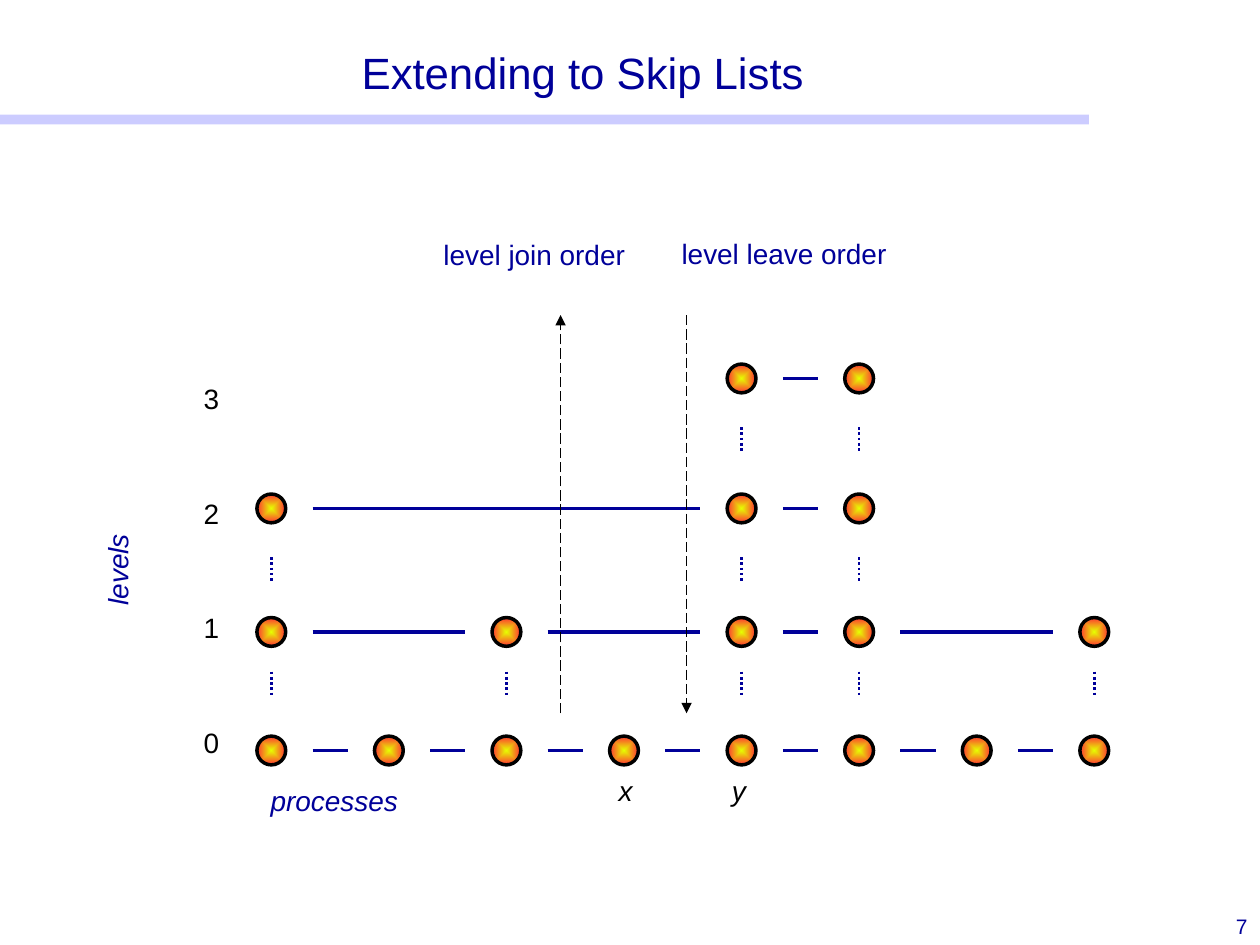
from pptx import Presentation
from pptx.dml.color import RGBColor
from pptx.enum.dml import MSO_LINE
from pptx.enum.shapes import MSO_CONNECTOR, MSO_SHAPE
from pptx.enum.text import MSO_ANCHOR, PP_ALIGN
from pptx.oxml import parse_xml
from pptx.oxml.ns import nsdecls, qn
from pptx.util import Cm, Pt

NAVY = RGBColor(0x00, 0x00, 0x99)
BLACK = RGBColor(0x00, 0x00, 0x00)
LAVENDER = RGBColor(0xCC, 0xCC, 0xFF)
YELLOW = RGBColor(0xE6, 0xFF, 0x00)
RED = RGBColor(0xFF, 0x33, 0x33)

prs = Presentation()
prs.slide_width, prs.slide_height = Cm(25.4), Cm(19.05)
s = prs.slides.add_slide(prs.slide_layouts[6])


def add_text(text, x, y, w, h, size=16, color=NAVY, align=PP_ALIGN.CENTER,
             italic=False, wrap=True, spacing=None):
    box = s.shapes.add_textbox(Cm(x), Cm(y), Cm(w), Cm(h))
    tf = box.text_frame
    tf.word_wrap = wrap
    p = tf.paragraphs[0]
    p.text = text
    p.alignment = align
    p.line_spacing = spacing
    p.font.name, p.font.size, p.font.italic = "Arial", Pt(size), italic
    p.font.color.rgb = color
    return tf


def add_line(x1, y1, x2, y2, width=1.75, color=NAVY, dash=None, arrow=False):
    line = s.shapes.add_connector(MSO_CONNECTOR.STRAIGHT, Cm(x1), Cm(y1), Cm(x2), Cm(y2))
    line.line.width = Pt(width)
    line.line.color.rgb = color
    if dash:
        line.line.dash_style = dash
    if arrow:
        line.line._get_or_add_ln().append(
            parse_xml(f'<a:tailEnd {nsdecls("a")} type="triangle"/>'))
    line._element.spPr.append(parse_xml(f'<a:effectLst {nsdecls("a")}/>'))


# Title, rule and page number
rule = s.shapes.add_shape(MSO_SHAPE.RECTANGLE, 0, Cm(2.31), Cm(21.95), Cm(0.2))
rule.shadow.inherit = False
rule.fill.solid()
rule.fill.fore_color.rgb = LAVENDER
rule.line.fill.background()
add_text("7", 24.13, 18.29, 1.27, 0.76, size=12, align=PP_ALIGN.RIGHT)
title = add_text("Extending to Skip Lists", 1.9, 0.76, 19.69, 1.35, size=25, spacing=1.1)
title.vertical_anchor = MSO_ANCHOR.BOTTOM

# Axis and process labels
add_text("processes", 2.36, 15.67, 8.76, 0.94, italic=True)
levels = add_text("levels", 1.9, 10.64, 1.19, 1.7, italic=True, wrap=False)
levels._txBody.bodyPr.set("vert", "vert270")
for level in range(4):
    add_text(str(level), 3.84, 14.5 - 2.31 * level, 0.84, 0.94, color=BLACK, wrap=False)
for name, x in (("x", 12.22), ("y", 14.5)):
    add_text(name, x, 15.47, 0.79, 0.94, color=BLACK, italic=True, wrap=False)

# Skip list: the columns present on each level, with the level's centre height
# and the top of the dotted line that leads down to the level below
FIRST_X, PITCH = 5.47, 2.37
LINK_GAP, DOTTED = 0.83, 0.5
DIAMETER = 0.58
LEVELS = [
    (15.13, None, range(8)),
    (12.74, 13.54, (0, 2, 4, 5, 7)),
    (10.25, 11.23, (0, 4, 5)),
    (7.63, 8.61, (4, 5)),
]
for y, dots_y, columns in LEVELS:
    centers = [FIRST_X + PITCH * c for c in columns]
    for left, right in zip(centers, centers[1:]):
        add_line(left + LINK_GAP, y, right - LINK_GAP, y)
    for x in centers:
        if dots_y:
            add_line(x, dots_y, x, dots_y + DOTTED, width=1.5, dash=MSO_LINE.ROUND_DOT)
        node = s.shapes.add_shape(MSO_SHAPE.OVAL, Cm(x - DIAMETER / 2), Cm(y - DIAMETER / 2),
                                  Cm(DIAMETER), Cm(DIAMETER))
        node.shadow.inherit = False
        node.line.color.rgb = BLACK
        node.line.width = Pt(2)
        node.fill.gradient()
        for stop, color in zip(node.fill.gradient_stops, (YELLOW, RED)):
            stop.color.rgb = color
        grad = node._element.spPr.find(qn("a:gradFill"))
        grad.replace(grad.find(qn("a:lin")), parse_xml(
            f'<a:path {nsdecls("a")} path="shape">'
            '<a:fillToRect l="50000" t="50000" r="50000" b="50000"/></a:path>'))

# Join and leave order
TOP, BOTTOM = 6.35, 14.38
for x, start, end in ((13.84, TOP, BOTTOM), (11.3, BOTTOM, TOP)):
    add_line(x, start, x, end, width=0.75, color=BLACK, dash=MSO_LINE.LONG_DASH, arrow=True)
for text, x, y, w in (("level join order", 8.69, 4.6, 4.52),
                      ("level leave order", 13.49, 4.57, 6.2)):
    add_text(text, x, y, w, 1.07, align=PP_ALIGN.LEFT, spacing=1.1)

prs.save("out.pptx")
